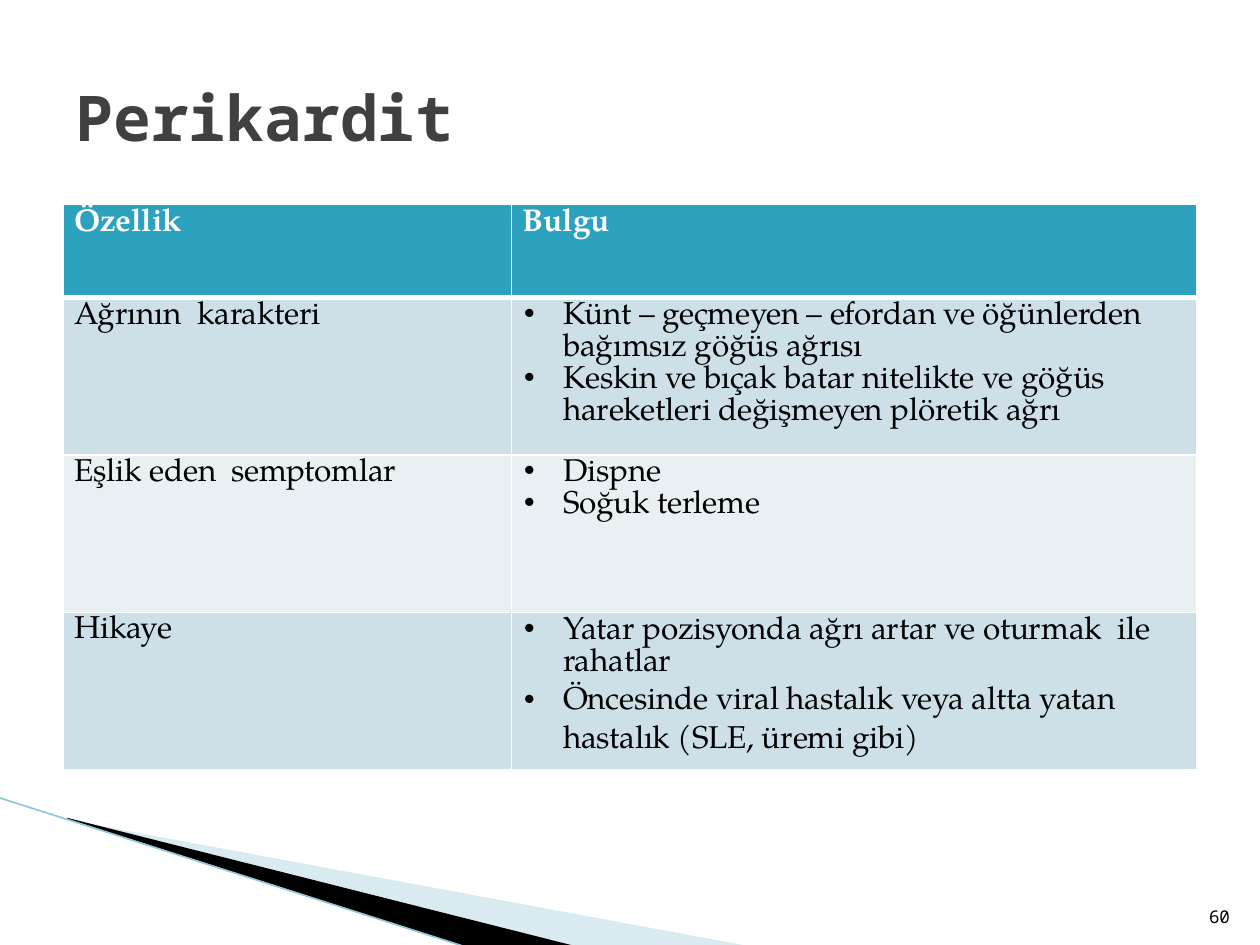
from lxml import etree
from pptx import Presentation
from pptx import util as u
from pptx.dml.color import RGBColor
from pptx.enum import shapes, text
from pptx.oxml.ns import qn

PX = 9144  # one hundredth of an inch, in EMU
SERIF, MONO = "TeX Gyre Pagella", "Noto Sans Mono"
COLORS = {
    "white": "FFFFFF", "black": "000000", "title": "404040",
    "header": "2DA2BF", "band": "CDE0E8", "plain": "E8F0F4",
    "wedge": "A0CBDC", "edge": "97C5D8",
}


def px(value):
    return u.Emu(value * PX)


def color(name):
    return RGBColor.from_string(COLORS[name])


def add_text(para, words, size=18, font=SERIF, ink="black", bold=False, spacing=0):
    span = para.add_run()
    span.text = words
    span.font.size = u.Pt(size)
    span.font.name = font
    span.font.bold = bold
    span.font.color.rgb = color(ink)
    if spacing:
        span.font._element.set("spc", str(spacing))


def set_indent(para, left, bullet=False):
    props = para._p.get_or_add_pPr()
    props.set("marL", str(px(left)))
    props.set("indent", str(px(-31 if bullet else 0)))
    if bullet:
        etree.SubElement(props, qn("a:buChar")).set("char", "•")


def set_borders(cell, bottom):
    """Draw white cell borders; must run before the cell gets its fill."""
    props = cell._tc.get_or_add_tcPr()
    for side, width in (("L", 1), ("R", 1), ("T", 1), ("B", bottom)):
        line = etree.SubElement(props, qn(f"a:ln{side}"), w=str(u.Pt(width)))
        fill = etree.SubElement(line, qn("a:solidFill"))
        etree.SubElement(fill, qn("a:srgbClr"), val=COLORS["white"])


class Page:
    def __init__(self, deck):
        self.slide = deck.slides.add_slide(deck.slide_layouts[6])

    def wedge(self, points, fill, opacity=100):
        builder = self.slide.shapes.build_freeform(*points[0], scale=PX)
        builder.add_line_segments(points[1:], close=True)
        shape = builder.convert_to_shape()
        shape.shadow.inherit = False
        shape.fill.solid()
        shape.fill.fore_color.rgb = color(fill)
        shape.line.fill.background()
        if opacity < 100:
            tint = shape._element.spPr.find(qn("a:solidFill"))[0]
            etree.SubElement(tint, qn("a:alpha"), val=str(opacity * 1000))

    def line(self, start, end, ink, width):
        line = self.slide.shapes.add_connector(
            shapes.MSO_CONNECTOR.STRAIGHT, *map(px, start + end))
        line.line.color.rgb = color(ink)
        line.line.width = u.Pt(width)
        etree.SubElement(line._element.spPr, qn("a:effectLst"))

    def label(self, area, words, anchor, align, **style):
        box = self.slide.shapes.add_textbox(*map(px, area))
        frame = box.text_frame
        frame.word_wrap = True
        frame.vertical_anchor = anchor
        para = frame.paragraphs[0]
        para.alignment = align
        add_text(para, words, **style)

    def table(self, area, widths, heights, rows):
        grid = self.slide.shapes.add_table(
            len(rows), len(widths), *map(px, area)).table
        for column, width in zip(grid.columns, widths):
            column.width = px(width)
        for index, (row, height) in enumerate(zip(grid.rows, heights)):
            row.height = px(height)
            header = index == 0
            fill = "header" if header else "band" if index % 2 else "plain"
            feature, findings = rows[index]
            self.cell(row.cells[0], [feature], fill, header)
            self.cell(row.cells[1], findings, fill, header, bullets=not header)

    def cell(self, cell, lines, fill, header, bullets=False):
        set_borders(cell, bottom=3 if header else 1)
        cell.fill.solid()
        cell.fill.fore_color.rgb = color(fill)
        cell.margin_left = cell.margin_right = cell.margin_bottom = 0
        cell.margin_top = px(4 if header else 3)
        frame = cell.text_frame
        for index, (words, leading) in enumerate(lines):
            para = frame.add_paragraph() if index else frame.paragraphs[0]
            set_indent(para, 41 if bullets else 9, bullets)
            para.line_spacing = leading
            add_text(para, words, ink="white" if header else "black",
                     bold=header, spacing=-10)


def main():
    deck = Presentation()
    deck.slide_width, deck.slide_height = px(1000), px(750)
    page = Page(deck)

    page.wedge([(55, 651), (595, 751), (456, 751), (55, 650)], "wedge", opacity=40)
    page.wedge([(53, 649), (457, 751), (372, 752), (54, 650)], "black")
    page.line((-1, 633), (371, 752), "edge", 0.95)

    normal, loose = 1.01, u.Pt(22)
    rows = [
        (("Özellik", 1.0), [("Bulgu", 1.0)]),
        (("Ağrının  karakteri", normal), [
            ("Künt – geçmeyen – efordan ve öğünlerden  bağımsız göğüs ağrısı", normal),
            ("Keskin ve bıçak batar nitelikte ve göğüs  hareketleri değişmeyen "
             "plöretik ağrı", normal)]),
        (("Eşlik eden  semptomlar", normal), [
            ("Dispne", 1.0), ("Soğuk terleme", 1.0)]),
        (("Hikaye", 1.0), [
            ("Yatar pozisyonda ağrı artar ve oturmak  ile  rahatlar", normal),
            ("Öncesinde viral hastalık veya altta yatan  hastalık "
             "(SLE, üremi gibi)", loose)]),
    ]
    page.table((50, 162, 900, 449), [356, 544], [74, 125, 125, 125], rows)

    page.label((946, 701, 40, 40), "60", text.MSO_ANCHOR.BOTTOM,
               text.PP_ALIGN.RIGHT, size=10, font=MONO)
    page.label((50, 30, 859, 125), "Perikardit", text.MSO_ANCHOR.MIDDLE,
               text.PP_ALIGN.LEFT, size=36, font=MONO, ink="title", bold=True)
    deck.save("out.pptx")


if __name__ == "__main__":
    main()
